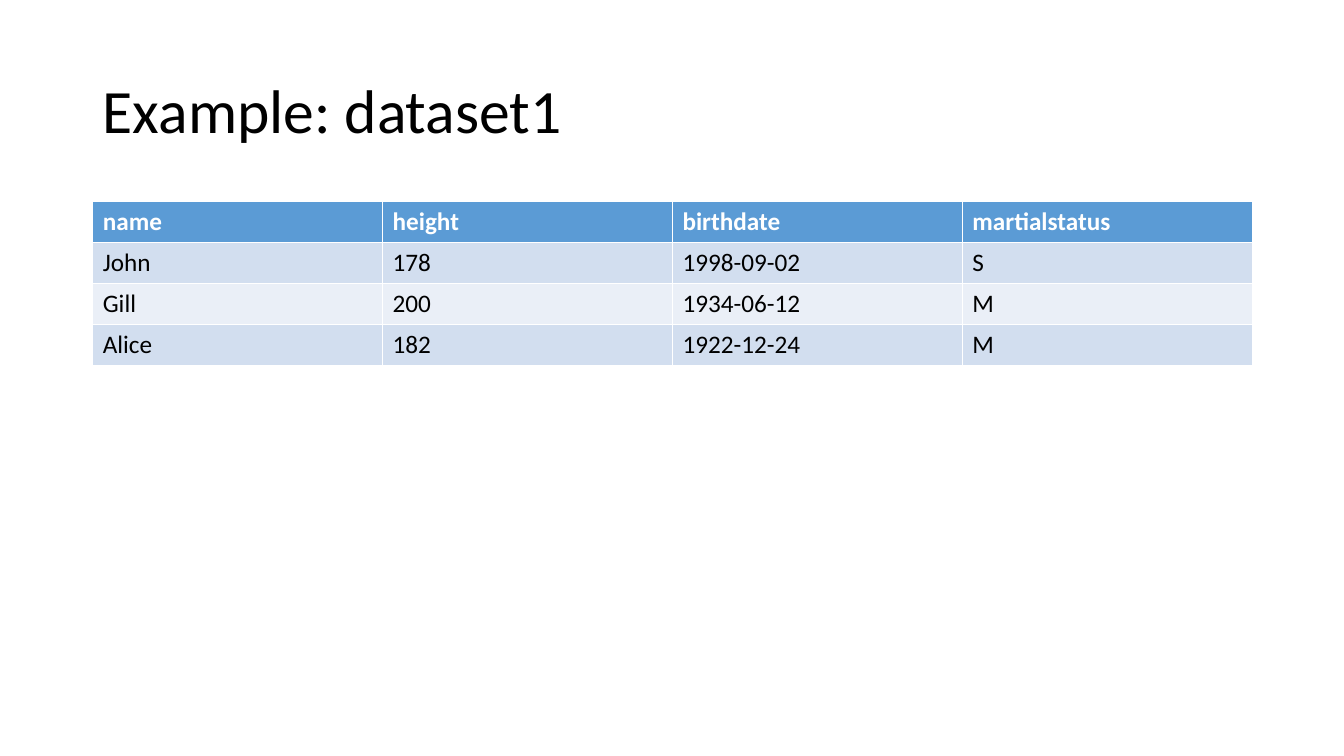
from pptx import Presentation
from pptx.dml.color import RGBColor
from pptx.enum import text
from pptx.util import Inches, Pt

COLORS = {
    "title": "000000",
    "header_text": "FFFFFF",
    "body_text": "000000",
    "header": "5B9BD5",
    "odd_row": "D2DEEF",
    "even_row": "EAEFF7",
}
FONT = "Calibri"
TITLE_BOX = (0.92, 0.4, 11.5, 1.45)
TABLE_BOX = (0.92, 2, 11.5, 1.62)
RECORDS = [
    ("name", "height", "birthdate", "martialstatus"),
    ("John", "178", "1998-09-02", "S"),
    ("Gill", "200", "1934-06-12", "M"),
    ("Alice", "182", "1922-12-24", "M"),
]


def format_runs(para, size, color, bold=False):
    for span in para.runs:
        span.font.name = FONT
        span.font.size = Pt(size)
        span.font.bold = bold
        span.font.color.rgb = RGBColor.from_string(COLORS[color])


def place_title(page, box, wording):
    title = page.shapes.title
    title.left, title.top, title.width, title.height = map(Inches, box)
    frame = title.text_frame
    frame.text = wording
    frame.word_wrap = True
    frame.auto_size = text.MSO_AUTO_SIZE.NONE
    frame.vertical_anchor = text.MSO_ANCHOR.MIDDLE
    para = frame.paragraphs[0]
    para.alignment = text.PP_ALIGN.LEFT
    para.line_spacing = 0.9
    format_runs(para, 44, "title")


def place_table(page, box, records):
    left, top, width, height = map(Inches, box)
    table = page.shapes.add_table(
        len(records), len(records[0]), left, top, width, height
    ).table
    for row_index, record in enumerate(records):
        is_header = row_index == 0
        fill = "header" if is_header else "odd_row" if row_index % 2 else "even_row"
        color = "header_text" if is_header else "body_text"
        for column_index, value in enumerate(record):
            cell = table.cell(row_index, column_index)
            cell.fill.solid()
            cell.fill.fore_color.rgb = RGBColor.from_string(COLORS[fill])
            cell.text_frame.text = value
            format_runs(cell.text_frame.paragraphs[0], 18, color, is_header)


def main():
    deck = Presentation()
    deck.slide_width = Inches(13.33)
    deck.slide_height = Inches(7.5)
    page = deck.slides.add_slide(deck.slide_layouts.get_by_name("Title Only"))
    place_title(page, TITLE_BOX, "Example: dataset1")
    place_table(page, TABLE_BOX, RECORDS)
    deck.save("out.pptx")


if __name__ == "__main__":
    main()
